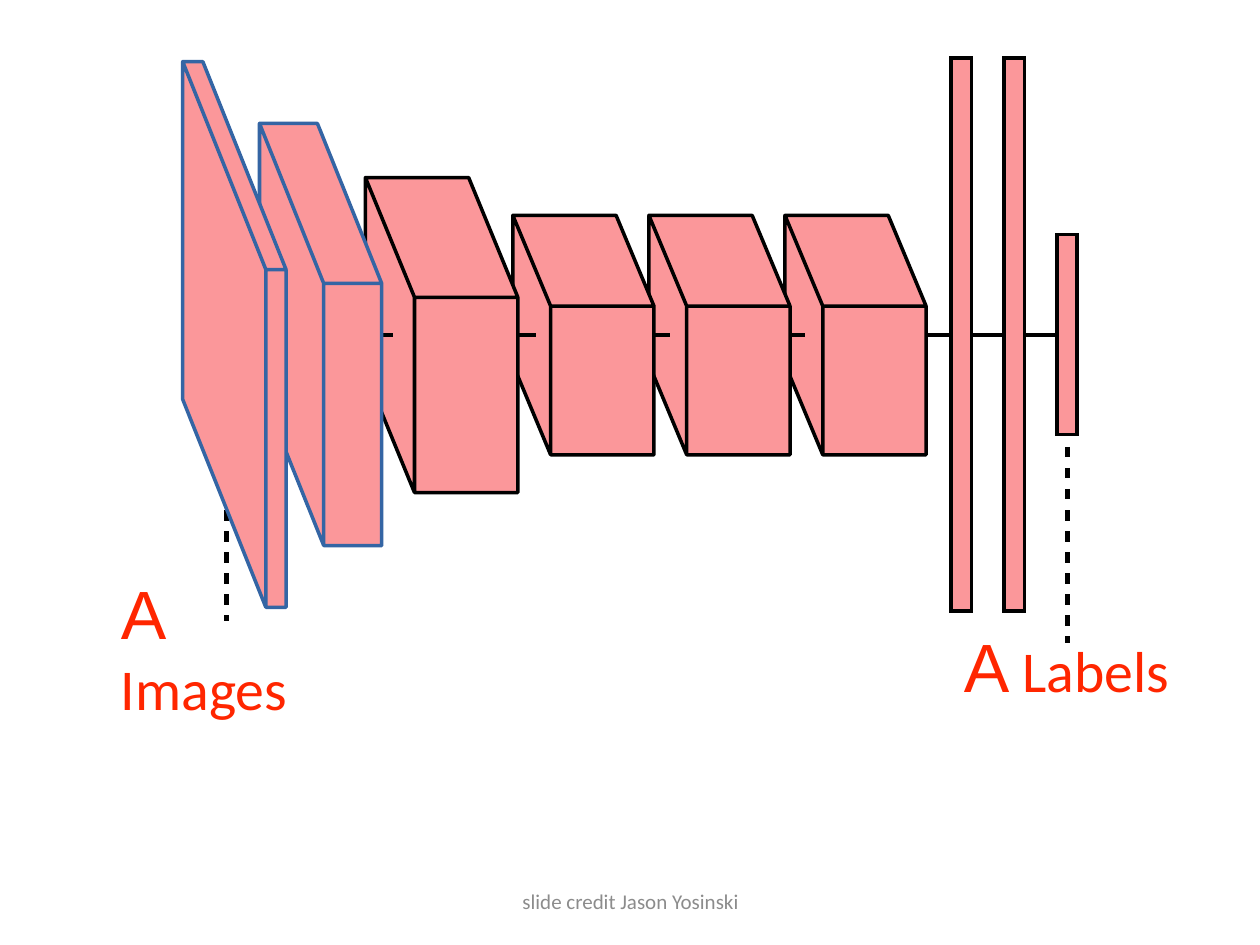
from lxml.etree import SubElement
from pptx import Presentation
from pptx.dml.color import RGBColor
from pptx.enum.shapes import MSO_CONNECTOR as LINE, MSO_SHAPE as SHAPE
from pptx.enum.text import MSO_ANCHOR as ANCHOR, PP_ALIGN as ALIGN
from pptx.oxml.ns import qn
from pptx.util import Inches, Pt

BLACK = RGBColor(0x00, 0x00, 0x00)
PINK = RGBColor(0xFB, 0x97, 0x9A)
BLUE = RGBColor(0x34, 0x65, 0xA4)
RED = RGBColor(0xFF, 0x26, 0x00)
GRAY = RGBColor(0x8C, 0x8C, 0x8C)

deck = Presentation()
deck.slide_width, deck.slide_height = Inches(10), Inches(7.5)
page = deck.slides.add_slide(deck.slide_layouts[6])
shapes = page.shapes

# Square grid: ten columns across the slide, 7.5 rows down
CELL = deck.slide_width // 10
AXIS = 2.66


def grid(*cells):
    return [round(cell * CELL) for cell in cells]


def add_line(x1, y1, x2, y2, width=2):
    line = shapes.add_connector(LINE.STRAIGHT, *grid(x1, y1, x2, y2))
    line.line.color.rgb = BLACK
    line.line.width = Pt(width)
    SubElement(line._element.spPr, qn("a:effectLst"))
    return line


# Dashed leaders down to the two captions
for x, top, bottom in [(1.8, 4.05, 4.93), (8.47, 3.38, 5.1)]:
    leader = add_line(x, top, x, bottom, 3)
    dashes = SubElement(leader.line._get_or_add_ln(), qn("a:custDash"))
    SubElement(dashes, qn("a:ds"), d="200000", sp="200000")

# Axis through the dense layers, then the layers as tall bars
add_line(7.29, AXIS, 8.49, AXIS)
for column, (top, height) in enumerate([(0.46, 4.39), (0.46, 4.39), (1.86, 1.59)]):
    bar = shapes.add_shape(SHAPE.RECTANGLE, *grid(7.55 + 0.42 * column, top, 0.16, height))
    bar.shadow.inherit = False
    bar.fill.solid()
    bar.fill.fore_color.rgb = PINK
    bar.line.color.rgb = BLACK
    bar.line.width = Pt(2)
    SubElement(bar.line._get_or_add_ln(), qn("a:miter"), lim="800000")

# Convolution blocks from back to front:
# front face left, top, width, height; depth shift; outline; start of link on the left
blocks = [(6.53 - 1.08 * step, 2.43, 0.82, 1.18, 0.3, 0.72, BLACK, 6.16 - 1.07 * step)
          for step in range(3)]
blocks += [
    (3.29, 2.36, 0.82, 1.55, 0.39, 0.95, BLACK, 2.89),
    (2.57, 2.25, 0.46, 2.08, 0.51, 1.27, BLUE, None),
    (2.11, 2.14, 0.16, 2.68, 0.66, 1.65, BLUE, None),
]
for left, top, width, height, shift, rise, outline, link in blocks:
    right, bottom = left + width, top + height
    corner = (left, top)
    back = (left - shift, top - rise)
    points = [
        (left, bottom), (left - shift, bottom - rise), back, corner,   # side
        back, (right - shift, top - rise), (right, top), corner,       # top
        (right, top), (right, bottom), (left, bottom),                 # front
    ]
    builder = shapes.build_freeform(*grid(*corner))
    builder.add_line_segments([grid(*point) for point in points], close=True)
    block = builder.convert_to_shape()
    block.shadow.inherit = False
    block.fill.solid()
    block.fill.fore_color.rgb = PINK
    block.line.color.rgb = outline
    block.line.width = Pt(2)
    if link:
        add_line(link, AXIS, link + 0.23, AXIS)

# Captions and credit: place, wrap, inset, alignment, runs
captions = [
    ((0.9, 4.74, 1.9, 0.78), False, 0.06, ALIGN.LEFT,
     [("A", 39, "Arial", RED), (" Images", 33, "Calibri", RED)]),
    ((7.59, 4.89, 1.77, 0.78), False, 0.06, ALIGN.LEFT,
     [("A", 39, "Arial", RED), (" Labels", 33, "Calibri", RED)]),
    ((3.42, 6.95, 3.17, 0.4), True, 0.1, ALIGN.CENTER,
     [("slide credit Jason Yosinski", 12, "Calibri", GRAY)]),
]
for place, wrap, inset, align, runs in captions:
    frame = shapes.add_textbox(*grid(*place)).text_frame
    frame.word_wrap = wrap
    frame.vertical_anchor = ANCHOR.MIDDLE
    for side in ("left", "top", "right", "bottom"):
        setattr(frame, f"margin_{side}", Inches(inset))
    para = frame.paragraphs[0]
    para.alignment = align
    for text, size, name, color in runs:
        span = para.add_run()
        span.text = text
        for key, value in {"size": Pt(size), "name": name}.items():
            setattr(span.font, key, value)
        span.font.color.rgb = color

deck.save("out.pptx")
